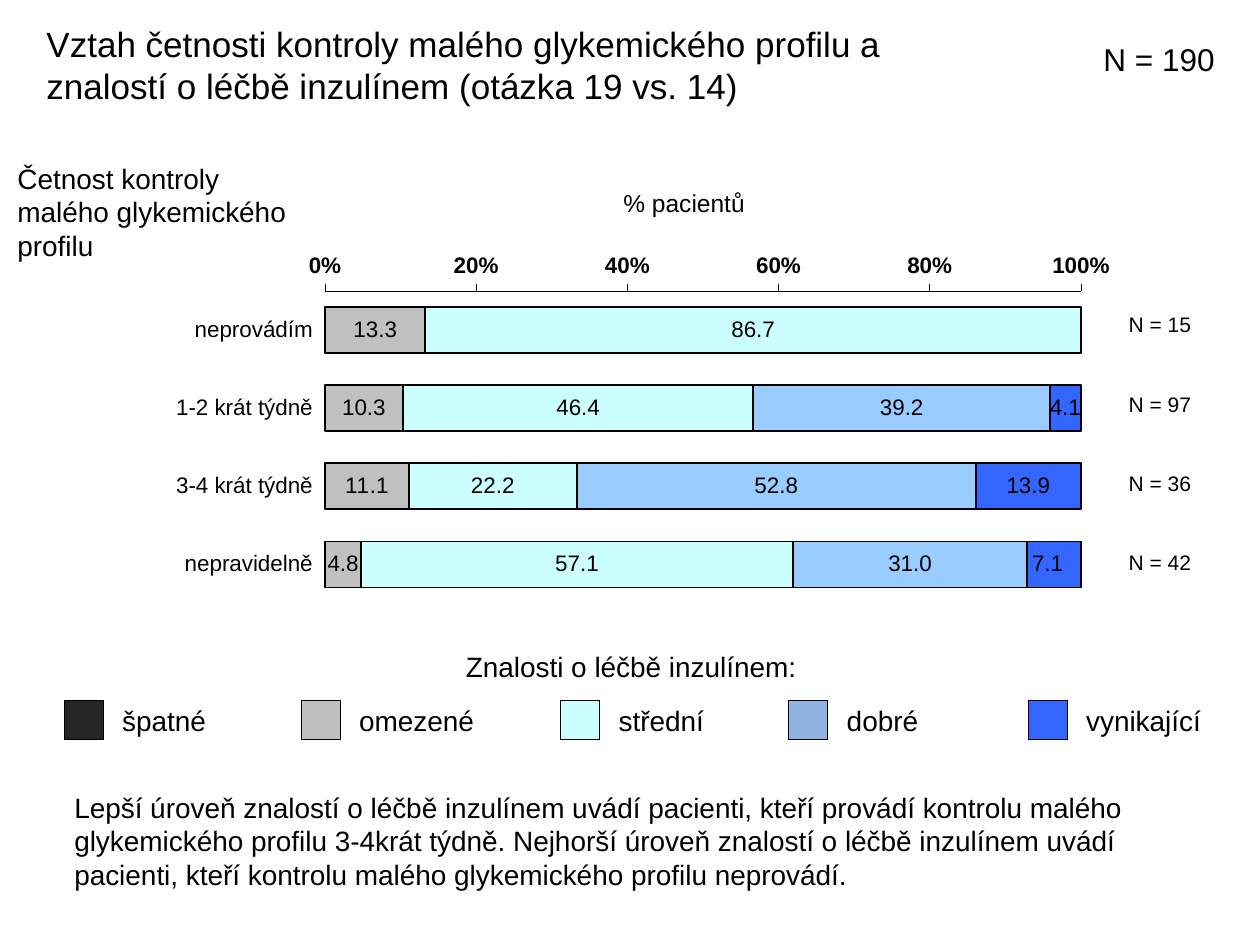
from collections import namedtuple

from lxml import etree
from pptx import Presentation
from pptx.chart.data import CategoryChartData
from pptx.dml.color import RGBColor
from pptx.enum.chart import XL_CHART_TYPE as ChartType
from pptx.enum.chart import XL_LABEL_POSITION as LabelPos
from pptx.enum.chart import XL_TICK_LABEL_POSITION as TickLabels
from pptx.enum.chart import XL_TICK_MARK as Tick
from pptx.enum.shapes import MSO_SHAPE as Shape
from pptx.enum.text import MSO_ANCHOR as Anchor
from pptx.enum.text import PP_ALIGN as Align
from pptx.oxml.ns import qn
from pptx.util import Inches, Pt

COLUMNS, ROWS = 100, 75
UNIT = Inches(10) // COLUMNS
FONT = "Arial"
BLACK = "000000"

FREQUENCIES = ["neprovádím", "1-2 krát týdně", "3-4 krát týdně", "nepravidelně"]
GROUP_SIZES = [15, 97, 36, 42]
KNOWLEDGE = [
    ("Series 1", "C0C0C0", [13.3, 10.3, 11.1, 4.8]),
    ("Series 2", "CCFFFF", [86.7, 46.4, 22.2, 57.1]),
    ("Series 3", "99CCFF", [None, 39.2, 52.8, 31.0]),
    ("Series 4", "3366FF", [None, 4.1, 13.9, 7.1]),
]
# caption, swatch colour, column offset, caption width
LEGEND = [
    ("špatné", "262626", 0, 10.2),
    ("omezené", "BFBFBF", 18.8, 11.3),
    ("střední", "CCFFFF", 39.4, 10.2),
    ("dobré", "8EB4E3", 57.5, 10.2),
    ("vynikající", "3366FF", 76.5, 11),
]

Box = namedtuple("Box", "left top width height")


def emu(box):
    return [round(length * UNIT) for length in box]


def color(hex_value):
    return RGBColor.from_string(hex_value)


def style_font(font, size, bold=False):
    font.name, font.size, font.bold = FONT, Pt(size), bold
    font.color.rgb = color(BLACK)


def style_line(line, width):
    line.color.rgb = color(BLACK)
    line.width = Pt(width)


def add_text(slide, box, text, size=16, align=Align.LEFT, anchor=Anchor.TOP,
             wrap=True, inset=(1, 0.5)):
    frame = slide.shapes.add_textbox(*emu(box)).text_frame
    frame.word_wrap = wrap
    frame.vertical_anchor = anchor
    frame.margin_left = frame.margin_right = round(inset[0] * UNIT)
    frame.margin_top = frame.margin_bottom = round(inset[1] * UNIT)
    paragraph = frame.paragraphs[0]
    paragraph.alignment = align
    run = paragraph.add_run()
    run.text = text
    style_font(run.font, size)


def set_inner_plot(chart, shares):
    plot_area = chart._chartSpace.chart.plotArea
    for old in plot_area.findall(qn("c:layout")):
        plot_area.remove(old)
    layout = etree.Element(qn("c:layout"))
    manual = etree.SubElement(layout, qn("c:manualLayout"))
    settings = [("layoutTarget", "inner"), ("xMode", "edge"), ("yMode", "edge")]
    for tag, value in settings + list(zip("xywh", shares)):
        etree.SubElement(manual, qn(f"c:{tag}")).set("val", str(value))
    plot_area.insert(0, layout)


def style_axes(chart):
    frequency, percent = chart.category_axis, chart.value_axis
    frequency.reverse_order = True
    frequency.format.line.fill.background()
    style_font(frequency.tick_labels.font, 12.8)
    percent.minimum_scale, percent.maximum_scale = 0, 1
    percent.major_unit = 0.2
    percent.has_major_gridlines = False
    percent.tick_labels.number_format = "0%"
    percent.tick_labels.number_format_is_linked = False
    style_font(percent.tick_labels.font, 12.8, bold=True)
    style_line(percent.format.line, 0.27)
    for axis in (frequency, percent):
        axis.major_tick_mark, axis.minor_tick_mark = Tick.OUTSIDE, Tick.NONE
        axis.tick_label_position = TickLabels.NEXT_TO_AXIS


def style_series(series, fill):
    series.format.fill.solid()
    series.format.fill.fore_color.rgb = color(fill)
    style_line(series.format.line, 1.07)
    labels = series.data_labels
    labels.show_value = True
    labels.number_format, labels.number_format_is_linked = "0.0", False
    style_font(labels.font, 12.8)


def add_knowledge_chart(slide, box):
    data = CategoryChartData(number_format="0.0")
    data.categories = FREQUENCIES
    for name, _, values in KNOWLEDGE:
        data.add_series(name, values)
    chart = slide.shapes.add_chart(ChartType.BAR_STACKED_100, *emu(box), data).chart
    chart.has_legend = chart.has_title = False
    style_font(chart.font, 13.1)
    plot = chart.plots[0]
    plot.gap_width, plot.overlap, plot.vary_by_categories = 70, 100, False
    for series, (_, fill, _) in zip(plot.series, KNOWLEDGE):
        style_series(series, fill)
    excellent = plot.series[-1]
    excellent.data_labels.position = LabelPos.INSIDE_BASE
    for row in (1, 2):
        label = excellent.points[row].data_label
        style_font(label.font, 12.8)
        label.position = LabelPos.CENTER
    style_axes(chart)
    set_inner_plot(chart, (0.24, 0.187, 0.696, 0.785))


def add_group_sizes(slide, box):
    pitch = box.height / len(GROUP_SIZES)
    for row, size in enumerate(GROUP_SIZES):
        cell = Box(box.left, box.top + row * pitch, box.width, 3.1)
        add_text(slide, cell, f"N = {size}", size=12, anchor=Anchor.MIDDLE, wrap=False)


def add_legend(slide, box):
    side = box.height
    for caption, fill, offset, width in LEGEND:
        left = box.left + offset
        swatch = slide.shapes.add_shape(
            Shape.RECTANGLE, *emu(Box(left, box.top, side, side)))
        swatch.shadow.inherit = False
        swatch.fill.solid()
        swatch.fill.fore_color.rgb = color(fill)
        style_line(swatch.line, 0.5)
        add_text(slide, Box(left + 3.8, box.top + 0.1, width, 3), caption,
                 anchor=Anchor.MIDDLE, inset=(0.8, 0.8))


def add_headings(slide, box):
    def place(left, top, width, height):
        return Box(box.left + left, box.top + top, width, height)

    add_text(slide, place(2.7, 1.3, 70.1, 5.5),
             "Vztah četnosti kontroly malého glykemického profilu a "
             "znalostí o léčbě inzulínem (otázka 19 vs. 14)", size=20)
    add_text(slide, place(86.6, 2.7, 13, 4), "N = 190", size=18)
    add_text(slide, place(0.4, 12.3, 23.6, 9.1),
             "Četnost kontroly malého glykemického profilu")
    add_text(slide, place(46.8, 14.4, 15, 3.4), "% pacientů", size=14,
             align=Align.CENTER)


def build():
    deck = Presentation()
    deck.slide_width, deck.slide_height = COLUMNS * UNIT, ROWS * UNIT
    slide = deck.slides.add_slide(deck.slide_layouts[6])
    add_headings(slide, Box(0, 0, COLUMNS, 21.4))
    add_knowledge_chart(slide, Box(5.1, 17.2, 86.2, 31.6))
    add_group_sizes(slide, Box(88.6, 24.2, 7, 25.2))
    add_text(slide, Box(35.8, 51.1, 28.6, 3.7), "Znalosti o léčbě inzulínem:",
             align=Align.CENTER, wrap=False)
    add_legend(slide, Box(5.1, 55.6, 91.3, 3.1))
    add_text(slide, Box(5.1, 61.9, 90.6, 9.9),
             "Lepší úroveň znalostí o léčbě inzulínem uvádí pacienti, kteří provádí "
             "kontrolu malého glykemického profilu 3-4krát týdně. Nejhorší úroveň "
             "znalostí o léčbě inzulínem uvádí pacienti, kteří kontrolu malého "
             "glykemického profilu neprovádí.", inset=(0.8, 0.8))
    deck.save("out.pptx")


if __name__ == "__main__":
    build()
